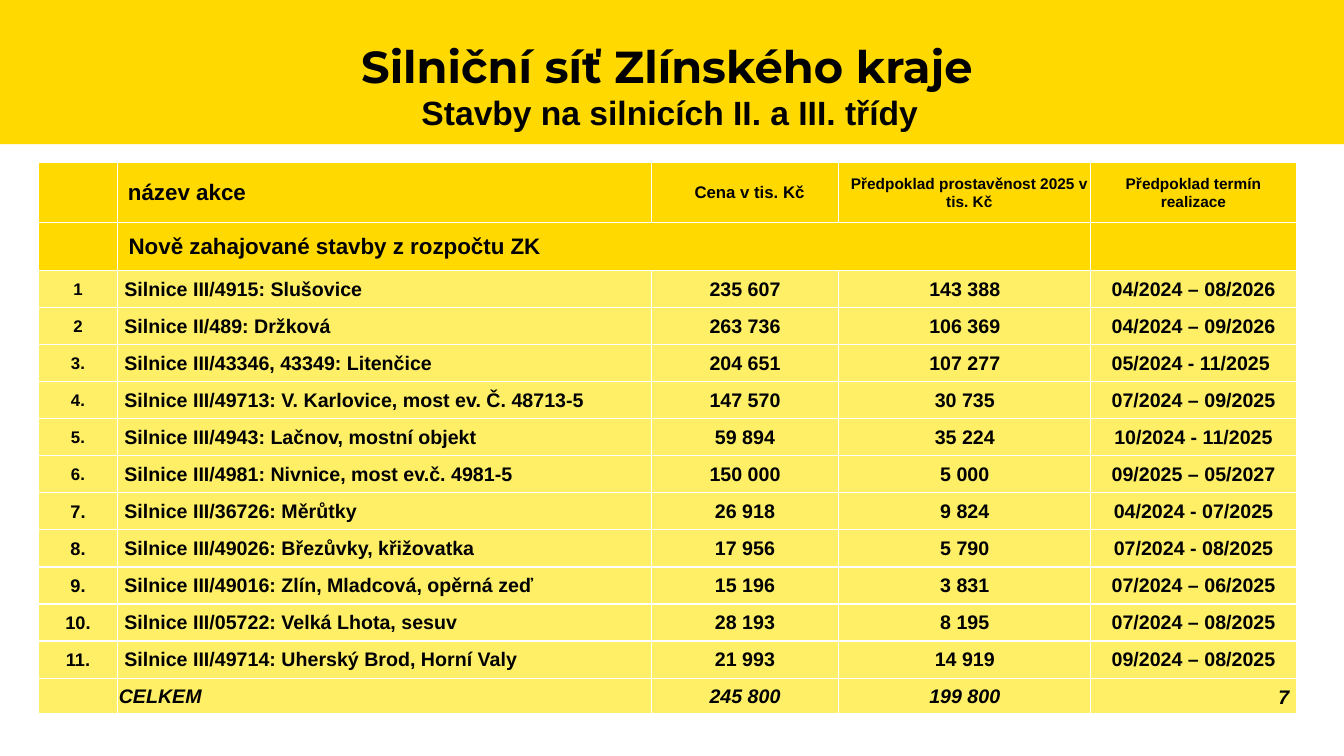
"""Build the slide on road works in the Zlín Region."""
from dataclasses import dataclass
from typing import NamedTuple

from lxml.etree import SubElement
from pptx import Presentation
from pptx.dml.color import RGBColor
from pptx.enum.shapes import MSO_SHAPE as SHAPE
from pptx.enum.text import MSO_ANCHOR as ANCHOR, PP_ALIGN as ALIGN
from pptx.oxml.ns import qn
from pptx.slide import Slide
from pptx.table import Table, _Cell as Cell
from pptx.util import Pt

GOLD, PALE, WHITE, BLACK = "FFD900", "FEEF66", "FFFFFF", "000000"
COLUMNS = [57, 381, 134, 180, 146.8]
WORK_ROW = 26.5


class Work(NamedTuple):
    number: str
    name: str
    price: str
    built: str
    term: str


@dataclass
class Style:
    size: float
    align: ALIGN = ALIGN.CENTER
    indent: float = 0
    italic: bool = False
    before: float = 0
    font: str = "Arial"
    spacing: float = 1


@dataclass
class Label:
    text: str
    left: float
    top: float
    width: float
    height: float
    anchor: ANCHOR
    style: Style


WORKS = [
    Work("1", "Silnice III/4915: Slušovice", "235 607", "143 388", "04/2024 – 08/2026"),
    Work("2", "Silnice II/489: Držková", "263 736", "106 369", "04/2024 – 09/2026"),
    Work("3.", "Silnice III/43346, 43349: Litenčice", "204 651", "107 277", "05/2024 - 11/2025 "),
    Work("4.", "Silnice III/49713: V. Karlovice, most ev. Č. 48713-5", "147 570", "30 735",
         "07/2024 – 09/2025"),
    Work("5.", "Silnice III/4943: Lačnov, mostní objekt", "59 894", "35 224", "10/2024 - 11/2025"),
    Work("6.", "Silnice III/4981: Nivnice, most ev.č. 4981-5", "150 000", "5 000",
         "09/2025 – 05/2027"),
    Work("7.", "Silnice III/36726: Měrůtky", "26 918", "9 824", "04/2024 - 07/2025"),
    Work("8.", "Silnice III/49026: Březůvky, křižovatka", "17 956", "5 790", "07/2024 - 08/2025"),
    Work("9.", "Silnice III/49016: Zlín, Mladcová, opěrná zeď", "15 196", "3 831",
         "07/2024 – 06/2025"),
    Work("10.", "Silnice III/05722: Velká Lhota, sesuv", "28 193", "8 195", "07/2024 – 08/2025"),
    Work("11.", "Silnice III/49714: Uherský Brod, Horní Valy", "21 993", "14 919",
         "09/2024 – 08/2025"),
]
HEADER = Work("", "název akce", "Cena v tis. Kč", "Předpoklad prostavěnost 2025 v tis. Kč",
              "Předpoklad termín realizace")
SECTION = Work("", "Nově zahajované stavby z rozpočtu ZK", "", "", "")
TOTAL = Work("", "CELKEM", "245 800", "199 800", "")

HEADER_STYLES = [Style(12), Style(16, ALIGN.LEFT, 6.5), Style(12, indent=6.5),
                 Style(11, indent=6.5), Style(11)]
SECTION_STYLES = [Style(16, ALIGN.LEFT, 7)] * 5
TOTAL_STYLES = [Style(14, ALIGN.LEFT, italic=True, before=6)] * 2 + [
    Style(14, italic=True, before=6)] * 3

LABELS = [
    Label("7", 903.6, 486, 24.5, 23.8, ANCHOR.BOTTOM, Style(14, ALIGN.RIGHT, italic=True)),
    Label("Silniční síť Zlínského kraje", 33.1, 26.6, 887, 45.4, ANCHOR.MIDDLE,
          Style(32, font="Montserrat", spacing=0.9)),
    Label("Stavby na silnicích II. a III. třídy", 28.8, 65.5, 899.3, 42.5, ANCHOR.TOP,
          Style(24, spacing=0.9)),
]


def color(value: str) -> RGBColor:
    return RGBColor.from_string(value)


def write(tf, text: str, style: Style) -> None:
    p = tf.paragraphs[0]
    p.alignment = style.align
    p.line_spacing = style.spacing
    p.space_before = Pt(style.before)
    r = p.add_run()
    r.text = text
    r.font.name = style.font
    r.font.size = Pt(style.size)
    r.font.bold = True
    r.font.italic = style.italic
    r.font.color.rgb = color(BLACK)


def add_borders(cell: Cell) -> None:
    tc_pr = cell._tc.get_or_add_tcPr()
    for i, side in enumerate(("lnL", "lnR", "lnT", "lnB")):
        ln = SubElement(tc_pr, qn(f"a:{side}"), w=str(Pt(1)))
        fill = SubElement(ln, qn("a:solidFill"))
        SubElement(fill, qn("a:srgbClr"), val=WHITE)
        tc_pr.insert(i, ln)


def fill_row(table: Table, row: int, texts: Work, styles: list[Style], back: str) -> None:
    for col, (text, style) in enumerate(zip(texts, styles)):
        cell = table.cell(row, col)
        cell.margin_left = Pt(0.7 + style.indent)
        cell.margin_right = cell.margin_top = Pt(0.7)
        cell.margin_bottom = Pt(0)
        cell.vertical_anchor = ANCHOR.MIDDLE
        cell.fill.solid()
        cell.fill.fore_color.rgb = color(back)
        add_borders(cell)
        if text:
            write(cell.text_frame, text, style)


def add_works_table(s: Slide) -> None:
    heights = [42.8, 34.2] + [WORK_ROW] * len(WORKS) + [25.3]
    frame = s.shapes.add_table(len(heights), len(COLUMNS), Pt(27.2), Pt(116.2),
                               Pt(sum(COLUMNS)), Pt(sum(heights)))
    table = frame.table
    table.first_row = table.horz_banding = False
    for column, width in zip(table.columns, COLUMNS):
        column.width = Pt(width)
    for row, height in zip(table.rows, heights):
        row.height = Pt(height)
    fill_row(table, 0, HEADER, HEADER_STYLES, GOLD)
    fill_row(table, 1, SECTION, SECTION_STYLES, GOLD)
    table.cell(1, 1).merge(table.cell(1, 3))
    for i, work in enumerate(WORKS):
        number = Style(12 if i < 6 else 13)
        styles = [number, Style(14, ALIGN.LEFT, 4)] + [Style(14)] * 3
        fill_row(table, i + 2, work, styles, PALE)
    fill_row(table, len(heights) - 1, TOTAL, TOTAL_STYLES, PALE)


def add_band(s: Slide) -> None:
    sp = s.shapes.add_shape(SHAPE.RECTANGLE, Pt(0), Pt(0), Pt(960), Pt(103))
    sp.shadow.inherit = False
    sp.fill.solid()
    sp.fill.fore_color.rgb = color(GOLD)
    sp.line.fill.background()


def add_label(s: Slide, label: Label) -> None:
    sp = s.shapes.add_textbox(Pt(label.left), Pt(label.top), Pt(label.width), Pt(label.height))
    tf = sp.text_frame
    tf.word_wrap = True
    tf.vertical_anchor = label.anchor
    write(tf, label.text, label.style)


def main() -> None:
    prs = Presentation()
    prs.slide_width, prs.slide_height = Pt(960), Pt(540)
    s = prs.slides.add_slide(prs.slide_layouts[6])
    add_band(s)
    add_works_table(s)
    for label in LABELS:
        add_label(s, label)
    prs.save("out.pptx")


if __name__ == "__main__":
    main()
